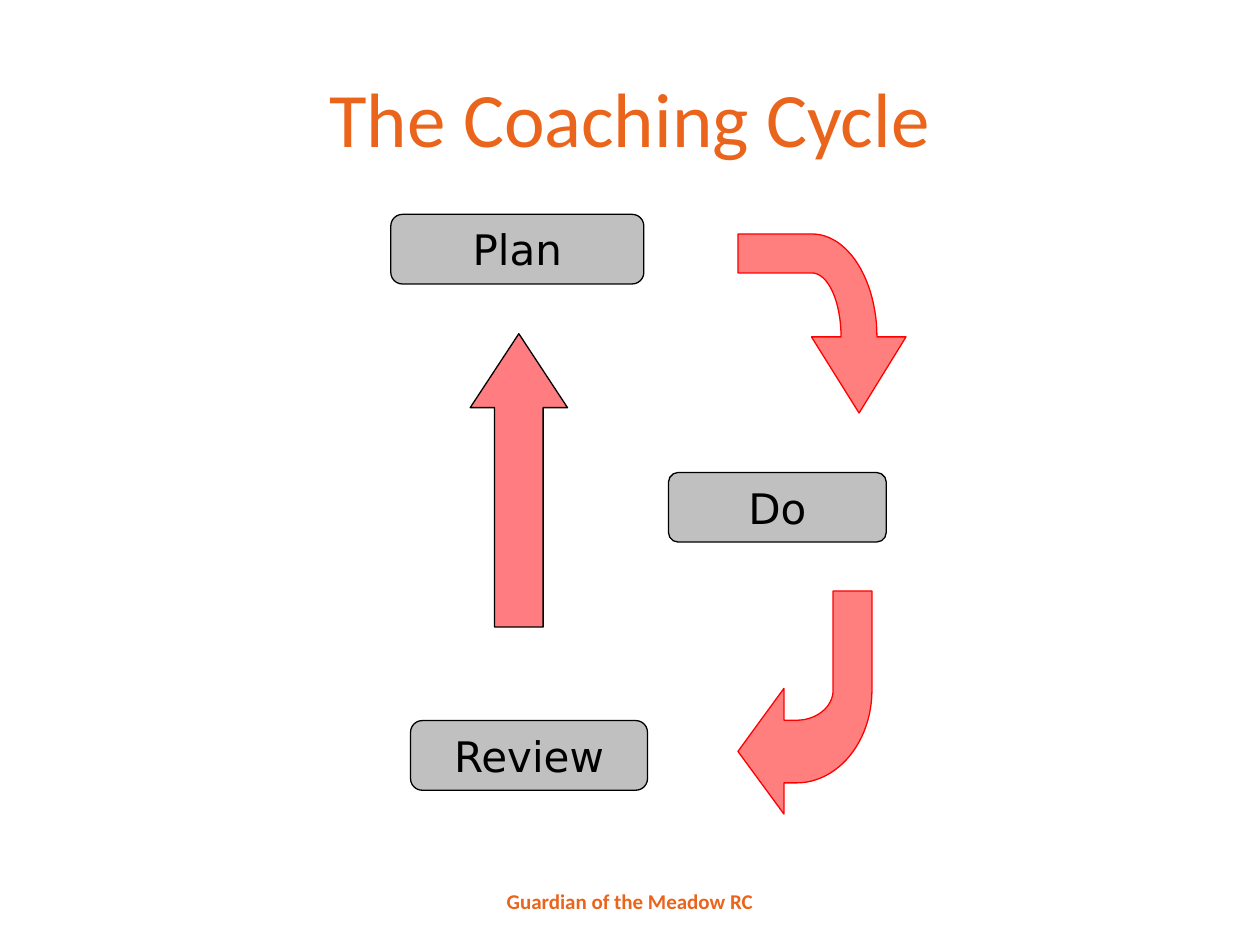
import math
from dataclasses import dataclass

from lxml import etree
from pptx import Presentation
from pptx import util as u
from pptx.dml.color import RGBColor
from pptx.enum import shapes, text
from pptx.oxml import ns

COLOURS = {
    "orange": "EB641B",
    "black": "000000",
    "grey": "C0C0C0",
    "pink": "FF7C80",
    "red": "FF0000",
}
LINE_WIDTH = 0.75
ARC_STEPS = 24

Point = tuple[float, float]


@dataclass(frozen=True)
class Stage:
    label: str
    left: float
    top: float
    width: float
    rounding: float
    height: float = 39.8


@dataclass(frozen=True)
class Arc:
    corner: Point
    end: Point


STAGES = [
    Stage("Plan", 223.3, 122.5, 144.6, 0.167),
    Stage("Do", 382, 270, 124.5, 0.141),
    Stage("Review", 234.6, 411.8, 135.4, 0.167),
]

PLAN_TO_DO = [
    (490.9, 236), (517.7, 192.5), (501.1, 192.5),
    Arc((501.1, 133.7), (464, 133.7)),
    (421.7, 133.7), (421.7, 156), (464, 156),
    Arc((480.6, 156), (480.6, 192.5)),
    (463.7, 192.5),
]
DO_TO_REVIEW = [
    (421.7, 429.4), (448, 465.2), (448, 447.4), (455.2, 447.4),
    Arc((498.3, 447.4), (498.3, 394.4)),
    (498.3, 337.7), (476.1, 337.7), (476.1, 394.4),
    Arc((476.1, 411.6), (455.2, 411.6)),
    (448, 411.6), (448, 393.4),
]


def colour(name: str) -> RGBColor:
    return RGBColor.from_string(COLOURS[name])


def write(box, content: str, *, font: str, size: float, ink: str, bold: bool = False) -> None:
    frame = box.text_frame
    frame.word_wrap = True
    frame.vertical_anchor = text.MSO_ANCHOR.MIDDLE
    para = frame.paragraphs[0]
    para.alignment = text.PP_ALIGN.CENTER
    span = para.add_run()
    span.text = content
    span.font.name = font
    span.font.size = u.Pt(size)
    span.font.bold = bold
    span.font.color.rgb = colour(ink)


def add_label(page, left: float, top: float, width: float, height: float,
              content: str, **style) -> None:
    box = page.shapes.add_textbox(u.Pt(left), u.Pt(top), u.Pt(width), u.Pt(height))
    write(box, content, font="Calibri", ink="orange", **style)


def paint(shape, fill: str, line: str) -> None:
    shape.shadow.inherit = False
    shape.fill.solid()
    shape.fill.fore_color.rgb = colour(fill)
    shape.line.color.rgb = colour(line)
    shape.line.width = u.Pt(LINE_WIDTH)


def add_stage(page, stage: Stage) -> None:
    box = page.shapes.add_shape(
        shapes.MSO_SHAPE.ROUNDED_RECTANGLE,
        u.Pt(stage.left), u.Pt(stage.top), u.Pt(stage.width), u.Pt(stage.height),
    )
    box.adjustments[0] = stage.rounding
    paint(box, "grey", "black")
    write(box, stage.label, font="DejaVu Sans", size=24, ink="black")


def arc_points(start: Point, arc: Arc) -> list[Point]:
    centre = [s + e - c for s, e, c in zip(start, arc.end, arc.corner)]
    angles = [math.pi / 2 * step / ARC_STEPS for step in range(1, ARC_STEPS + 1)]
    return [
        tuple(m + (s - m) * math.cos(angle) + (e - m) * math.sin(angle)
              for m, s, e in zip(centre, start, arc.end))
        for angle in angles
    ]


def add_bent_arrow(page, outline: list[Point | Arc]) -> None:
    points: list[Point] = []
    for part in outline:
        points += arc_points(points[-1], part) if isinstance(part, Arc) else [part]
    corners = [(u.Pt(x), u.Pt(y)) for x, y in points]
    builder = page.shapes.build_freeform(*corners[0])
    builder.add_line_segments(corners[1:], close=True)
    arrow = builder.convert_to_shape()
    paint(arrow, "red", "red")
    tint = arrow._element.spPr.find(ns.qn("a:solidFill"))[0]
    etree.SubElement(tint, ns.qn("a:alpha")).set("val", "50000")


def add_up_arrow(page) -> None:
    arrow = page.shapes.add_shape(
        shapes.MSO_SHAPE.UP_ARROW, u.Pt(268.7), u.Pt(190.7), u.Pt(55.6), u.Pt(167.6)
    )
    arrow.adjustments[0] = 0.5
    arrow.adjustments[1] = 0.76
    paint(arrow, "pink", "black")


def main() -> None:
    deck = Presentation()
    deck.slide_width, deck.slide_height = u.Pt(720), u.Pt(540)
    page = deck.slides.add_slide(deck.slide_layouts[6])
    add_label(page, 36, 21.6, 648, 90, "The Coaching Cycle", size=44)
    for stage in STAGES:
        add_stage(page, stage)
    for outline in (PLAN_TO_DO, DO_TO_REVIEW):
        add_bent_arrow(page, outline)
    add_up_arrow(page)
    add_label(page, 246, 500.5, 228, 28.8, "Guardian of the Meadow RC", size=12, bold=True)
    deck.save("out.pptx")


if __name__ == "__main__":
    main()
